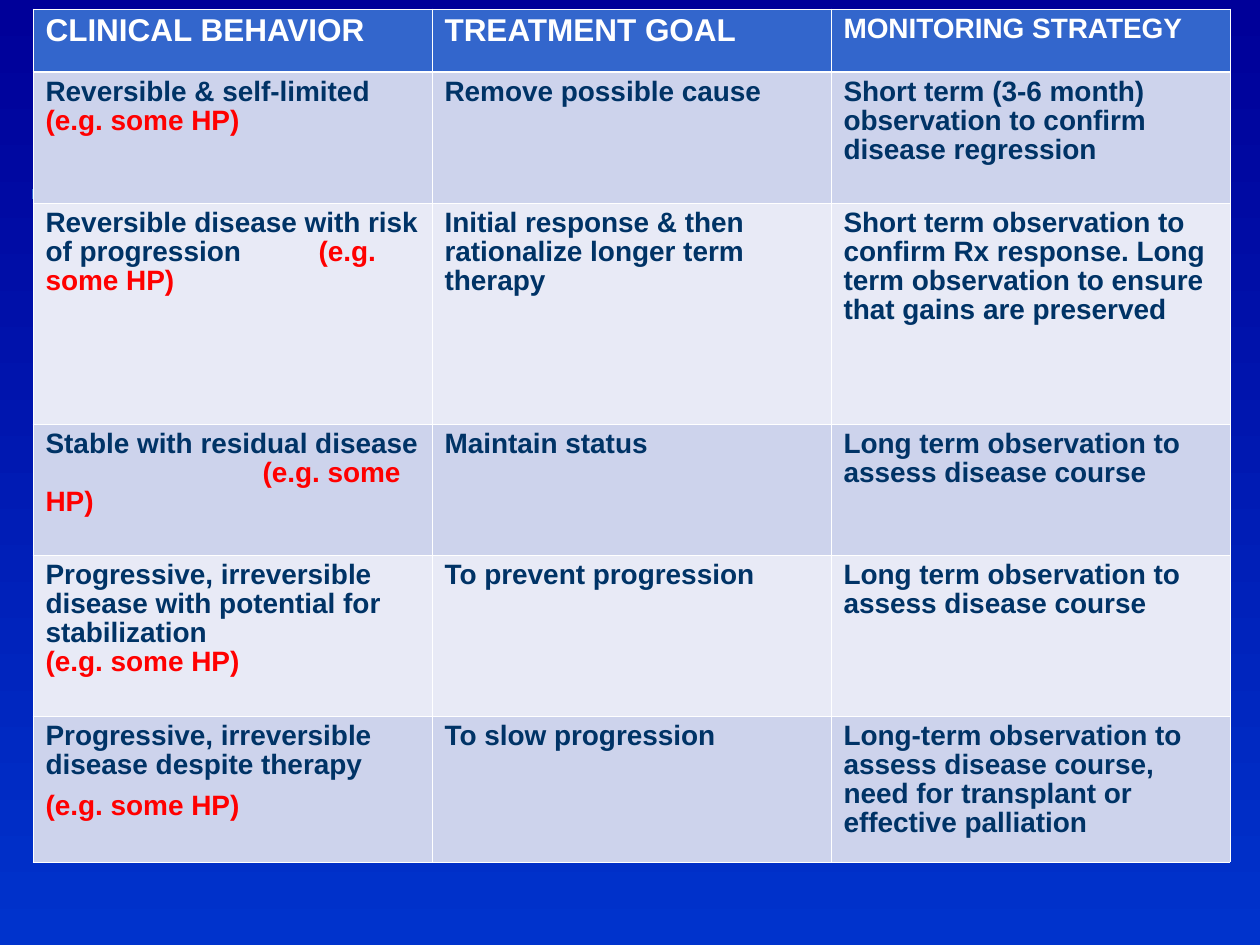
"""Build a slide with a table of clinical behavior, treatment goal and monitoring strategy."""
from copy import deepcopy
from dataclasses import dataclass

from lxml.etree import SubElement
from pptx import Presentation
from pptx.dml.color import RGBColor
from pptx.enum.shapes import MSO_SHAPE as Shape
from pptx.oxml.ns import qn
from pptx.util import Pt

SCALE = 914400 / 126
SLIDE = (1260, 945)
BAR = (32, 189, 1197, 10)
TABLE_LEFT, TABLE_TOP = 33, 9
COLUMN_WIDTH = 399
ROW_HEIGHTS = (63, 131, 221, 131, 161, 146)

EXAMPLE = "(e.g. some HP)"
HEADERS = (("CLINICAL BEHAVIOR", 18), ("TREATMENT GOAL", 18), ("MONITORING STRATEGY", 16))
ROWS = (
    {"behavior": "Reversible & self-limited ", "gap": "",
     "goal": "Remove possible cause",
     "strategy": "Short term (3-6 month) observation to confirm disease regression"},
    {"behavior": "Reversible disease with risk of progression", "gap": "tab", "tab": 273,
     "goal": "Initial response & then rationalize longer term therapy",
     "strategy": "Short term observation to confirm Rx response. Long term observation "
                 "to ensure that gains are preserved"},
    {"behavior": "Stable with residual disease", "gap": "break tab", "tab": 217,
     "goal": "Maintain status",
     "strategy": "Long term observation to assess disease course"},
    {"behavior": "Progressive, irreversible disease with potential for stabilization",
     "gap": "break",
     "goal": "To prevent progression",
     "strategy": "Long term observation to assess disease course"},
    {"behavior": "Progressive, irreversible disease despite therapy", "gap": "paragraph",
     "goal": "To slow progression",
     "strategy": "Long-term observation to assess disease course, need for transplant "
                 "or effective palliation"},
)


@dataclass(frozen=True)
class Theme:
    font: str = "Arial"
    body_size: int = 16
    text: str = "003366"
    accent: str = "FF0000"
    white: str = "FFFFFF"
    header: str = "3366CC"
    bands: tuple = ("CDD3EC", "E8EAF6")
    background: tuple = ((0, "000099"), (100, "0033CC"))
    bar: tuple = ((0, "3366CC"), (50, "99CCFF"), (100, "3366CC"))
    thin: float = 0.45
    thick: float = 1.47


THEME = Theme()


def px(value):
    return round(value * SCALE)


def set_gradient(fill, element, stops, angle):
    fill.gradient()
    fill.gradient_angle = angle
    stop_list = next(element.iter(qn("a:gsLst")))
    for stop in list(stop_list):
        stop_list.remove(stop)
    for position, color in stops:
        stop = SubElement(stop_list, qn("a:gs"), pos=str(position * 1000))
        SubElement(stop, qn("a:srgbClr"), val=color)


def add_text(paragraph, text, color=THEME.text, size=THEME.body_size):
    paragraph.line_spacing = 0.93
    paragraph.space_after = Pt(7)
    run = paragraph.add_run()
    run.text = text
    run.font.name = THEME.font
    run.font.size = Pt(size)
    run.font.bold = True
    run.font.color.rgb = RGBColor.from_string(color)
    return run


def add_example(frame, gap, tab=None):
    paragraph = frame.add_paragraph() if gap == "paragraph" else frame.paragraphs[0]
    if "break" in gap:
        paragraph.add_line_break()
    run = add_text(paragraph, "\t" + EXAMPLE if tab else EXAMPLE, color=THEME.accent)
    for line_break in paragraph._p.findall(qn("a:br")):
        line_break.append(deepcopy(run._r.find(qn("a:rPr"))))
    if tab:
        tabs = SubElement(paragraph._p.get_or_add_pPr(), qn("a:tabLst"))
        SubElement(tabs, qn("a:tab"), pos=str(px(tab)), algn="l")


def style_cell(cell, color, top, bottom):
    cell.fill.solid()
    cell.fill.fore_color.rgb = RGBColor.from_string(color)
    properties = cell._tc.get_or_add_tcPr()
    widths = {"L": THEME.thin, "R": THEME.thin, "T": top, "B": bottom}
    for index, (side, width) in enumerate(widths.items()):
        line = SubElement(properties, qn(f"a:ln{side}"), w=str(Pt(width)))
        SubElement(SubElement(line, qn("a:solidFill")), qn("a:srgbClr"), val=THEME.white)
        properties.insert(index, line)


def add_bar(slide):
    bar = slide.shapes.add_shape(Shape.RECTANGLE, *map(px, BAR))
    bar.shadow.inherit = False
    bar.line.fill.background()
    set_gradient(bar.fill, bar._element, THEME.bar, 0)


def add_treatment_table(slide):
    columns = len(HEADERS)
    table = slide.shapes.add_table(
        len(ROWS) + 1, columns, px(TABLE_LEFT), px(TABLE_TOP),
        px(COLUMN_WIDTH * columns), px(sum(ROW_HEIGHTS))).table
    table.horz_banding = False
    for column in table.columns:
        column.width = px(COLUMN_WIDTH)
    for row, height in zip(table.rows, ROW_HEIGHTS):
        row.height = px(height)
    for column, (text, size) in enumerate(HEADERS):
        cell = table.cell(0, column)
        style_cell(cell, THEME.header, THEME.thin, THEME.thick)
        add_text(cell.text_frame.paragraphs[0], text, color=THEME.white, size=size)
    for index, row in enumerate(ROWS):
        top = THEME.thin if index else THEME.thick
        for column, key in enumerate(("behavior", "goal", "strategy")):
            cell = table.cell(index + 1, column)
            style_cell(cell, THEME.bands[index % 2], top, THEME.thin)
            add_text(cell.text_frame.paragraphs[0], row[key])
        add_example(table.cell(index + 1, 0).text_frame, row["gap"], row.get("tab"))


def main():
    presentation = Presentation()
    presentation.slide_width, presentation.slide_height = map(px, SLIDE)
    slide = presentation.slides.add_slide(presentation.slide_layouts[6])
    set_gradient(slide.background.fill, slide._element, THEME.background, 270)
    add_bar(slide)
    add_treatment_table(slide)
    presentation.save("out.pptx")


if __name__ == "__main__":
    main()
